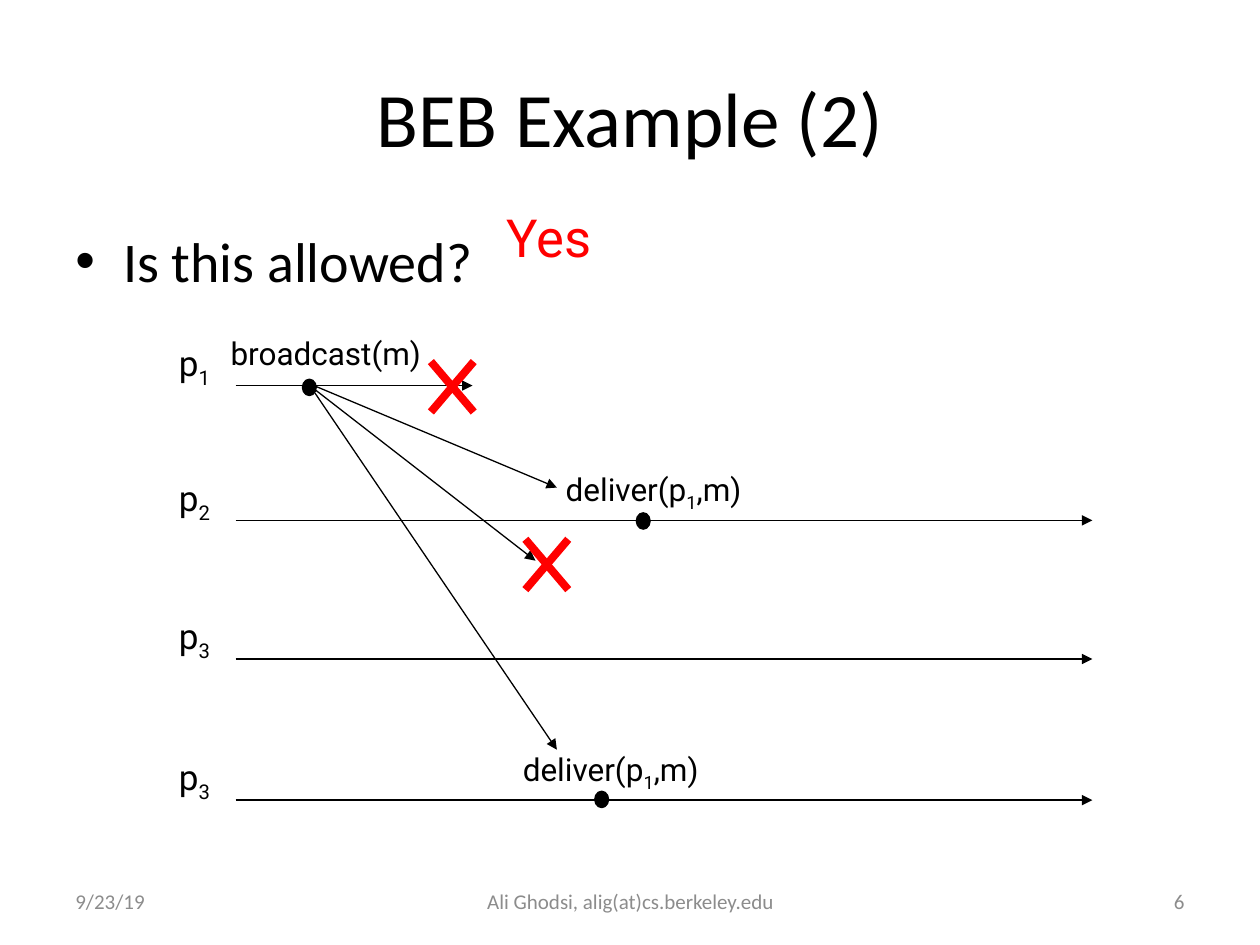
from pptx import Presentation
from pptx import util as u
from pptx.dml.color import RGBColor
from pptx.enum import shapes, text
from pptx.oxml.ns import qn
from lxml import etree

COLORS = {"ink": "000000", "alert": "FF0000", "footer": "8C8C8C"}
MIDDLE = text.MSO_ANCHOR.MIDDLE
LEFT, CENTER, RIGHT = text.PP_ALIGN.LEFT, text.PP_ALIGN.CENTER, text.PP_ALIGN.RIGHT


def color(name):
    return RGBColor.from_string(COLORS[name])


def add_runs(paragraph, pieces, size, font, ink="ink"):
    for index, piece in enumerate(pieces):
        run = paragraph.add_run()
        run.text = piece
        run.font.size = u.Pt(size)
        run.font.name = font
        run.font.color.rgb = color(ink)
        if index % 2:
            run.font._element.set("baseline", "-25000")


def add_text(slide, box, pieces, size, font="Roboto", ink="ink",
             align=LEFT, anchor=text.MSO_ANCHOR.TOP, inset=(0, 0)):
    frame = slide.shapes.add_textbox(*map(u.Inches, box)).text_frame
    frame.word_wrap = True
    frame.vertical_anchor = anchor
    frame.margin_left = frame.margin_right = u.Inches(inset[0])
    frame.margin_top = frame.margin_bottom = u.Inches(inset[1])
    paragraph = frame.paragraphs[0]
    paragraph.alignment = align
    add_runs(paragraph, pieces, size, font, ink)
    return paragraph


def add_line(owner, start, end, ink="ink", width=0.75, arrow=True):
    line = owner.shapes.add_connector(
        shapes.MSO_CONNECTOR.STRAIGHT, *map(u.Inches, (*start, *end)))
    line.line.color.rgb = color(ink)
    line.line.width = u.Pt(width)
    if arrow:
        etree.SubElement(line.line._get_or_add_ln(), qn("a:tailEnd"), type="triangle")
    etree.SubElement(line._element.spPr, qn("a:effectLst"))


def add_event(slide, left, top):
    event = slide.shapes.add_shape(
        shapes.MSO_SHAPE.OVAL, *map(u.Inches, (left, top, 0.11, 0.13)))
    event.shadow.inherit = False
    event.fill.solid()
    event.fill.fore_color.rgb = color("ink")
    event.line.color.rgb = color("ink")
    event.line.width = u.Pt(0.75)


def add_cross(slide, left, top, width=0.34, height=0.4):
    cross = slide.shapes.add_group_shape()
    right, bottom = left + width, top + height
    add_line(cross, (left, top), (right, bottom), "alert", 4.5, False)
    add_line(cross, (right, top), (left, bottom), "alert", 4.5, False)


def build_heading(slide, left, top, width):
    title = slide.shapes.title
    title.left, title.top = u.Inches(left), u.Inches(top)
    title.width, title.height = u.Inches(width), u.Inches(1.25)
    title.text_frame.vertical_anchor = MIDDLE
    paragraph = title.text_frame.paragraphs[0]
    paragraph.alignment = CENTER
    add_runs(paragraph, ["BEB Example (2)"], 44, "Calibri")


def build_question(slide, left, top, width):
    question = add_text(slide, (left, top, width, 4.95), ["Is this allowed?"],
                        32, "Calibri", inset=(0.1, 0.05))
    properties = question._p.get_or_add_pPr()
    properties.set("marL", str(u.Inches(0.38)))
    properties.set("indent", str(u.Inches(-0.38)))
    etree.SubElement(properties, qn("a:buFont"), typeface="Arial")
    etree.SubElement(properties, qn("a:buChar"), char="•")
    add_text(slide, (left + 3.42, top - 0.17, 1.75, 0.6), ["Yes"], 30,
             ink="alert", inset=(0.1, 0.05))


def build_lanes(slide, left, top, width):
    lanes = [("1", 0, 2.33), ("2", 1.07, width), ("3", 2.17, width), ("3", 3.29, width)]
    for process, drop, reach in lanes:
        axis = top + drop
        add_text(slide, (left, axis - 0.35, 0.57, 0.33), ["p", process], 20)
        add_line(slide, (left + 0.45, axis), (left + reach, axis))


def build_messages(slide, left, top):
    add_text(slide, (left + 0.41, top - 0.41, 1.6, 0.3), ["broadcast(m)"], 18)
    for x, y in [(3.07, 0.67), (2.73, 2.89)]:
        add_text(slide, (left + x, top + y, 1.76, 0.3), ["deliver(p", "1", ",m)"], 18)
    for x, y in [(0.98, -0.05), (3.63, 1.01), (3.3, 3.22)]:
        add_event(slide, left + x, top + y)
    source = (left + 1, top - 0.03)
    for start, x, y in [(source, 3, 0.81), ((left + 1.08, top + 0.06), 3, 2.89),
                        (source, 2.83, 1.39)]:
        add_line(slide, start, (left + x, top + y))
    for x, y in [(2, -0.19), (2.75, 1.22)]:
        add_cross(slide, left + x, top + y)


def build_footer(slide, left, top):
    for x, width, words, align in [
            (0, 2.33, "9/23/19", LEFT),
            (2.92, 3.17, "Ali Ghodsi, alig(at)cs.berkeley.edu", CENTER),
            (6.67, 2.33, "6", RIGHT)]:
        add_text(slide, (left + x, top, width, 0.4), [words], 12, "Calibri",
                 "footer", align, MIDDLE, (0.1, 0.05))


def main():
    deck = Presentation()
    deck.slide_width, deck.slide_height = u.Inches(10), u.Inches(7.5)
    slide = deck.slides.add_slide(deck.slide_layouts[5])
    build_heading(slide, 0.5, 0.3, 9)
    build_question(slide, 0.5, 1.75, 9)
    build_lanes(slide, 1.42, 3.06, 7.25)
    build_messages(slide, 1.42, 3.06)
    build_footer(slide, 0.5, 6.95)
    deck.save("out.pptx")


if __name__ == "__main__":
    main()
